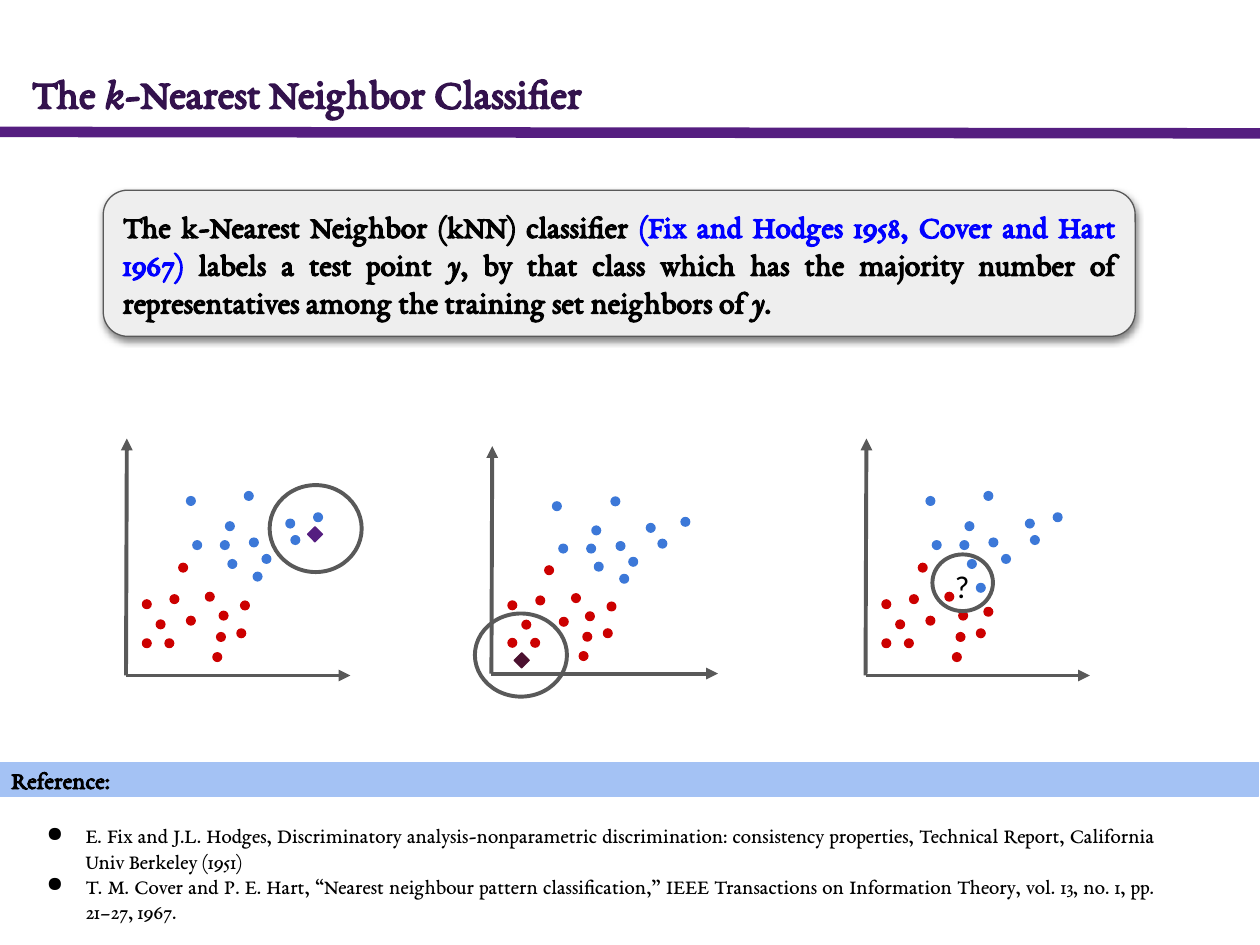
"""Builds the slide on the k-nearest neighbor classifier."""
from lxml.etree import SubElement
from pptx import Presentation
from pptx.dml.color import RGBColor
from pptx.enum.shapes import MSO_CONNECTOR as LINE, MSO_SHAPE as SHAPE
from pptx.enum.text import MSO_ANCHOR as ANCHOR, PP_ALIGN as ALIGN
from pptx.oxml.ns import qn
from pptx.util import Pt

SERIF = "EB Garamond"
BLACK, GRAY, PURPLE = "000000", "595959", "551E80"
RED, BLUE, LINK = "CC0000", "3C78D8", "0000FF"

TITLE = [("The ", ""), ("k", "i"), ("-Nearest Neighbor Classifier", "")]
CLAIM = [
    ("The k-Nearest Neighbor (kNN) classifier ", "", BLACK),
    ("(Fix and Hodges 1958, Cover and Hart 1967)", "", LINK),
    (" labels a test point ", "", BLACK),
    ("y", "i", BLACK),
    (", by that class which has the majority number of representatives "
     "among the training set neighbors of ", "", BLACK),
    ("y", "i", BLACK),
    (". ", "", BLACK),
]
SOURCES = [
    "E. Fix and J.L. Hodges, Discriminatory analysis-nonparametric discrimination: "
    "consistency properties, Technical Report, California Univ Berkeley (1951)",
    "T. M. Cover and P. E. Hart, “Nearest neighbour pattern classification,” IEEE "
    "Transactions on Information Theory, vol. 13, no. 1, pp. 21–27, 1967.",
]

DOTS = {
    RED: [(17.3, 31.7), (9.4, 20.9), (22.3, 20.9), (9.4, 43.2), (25.2, 46.1),
          (34.6, 33.8), (49.7, 13), (45.4, 47.5), (51.8, 24.5), (53.3, 36.7),
          (30.2, 64.1), (63.4, 26.6), (65.5, 42.5)],
    BLUE: [(58.3, 66.2), (38.2, 77), (54, 77), (72.7, 59), (70.6, 78.5),
           (77.8, 69.1), (56.9, 87.8), (91.4, 89.3), (94.3, 79.9),
           (67.7, 105.1), (107.3, 92.9), (34.6, 102.2)],
}
DOT, MARK = 5, 8.6
AXES = [(0.5, 135.4), (128.2, 0)]
PLOTS = [
    dict(base=(72, 386), scale=(1, 1), moved={},
         ring=(154.1, 277.2, 52.6, 49.7), mark=(175.7, 301), hue=PURPLE),
    dict(base=(280.8, 384.9), scale=(1.01, 0.96),
         moved={(RED, 5): (38.5, 33.4), (BLUE, 7): (87.7, 89.3)},
         ring=(271.4, 350.6, 52.6, 47.5), mark=(293.8, 373), hue="4C1130"),
    dict(base=(494.6, 386), scale=(1, 1),
         moved={(RED, 12): (67.7, 38.9), (BLUE, 3): (63.4, 52.6)},
         ring=(532.8, 316.8, 34.6, 32.4), mark=None, hue=None),
]


def color(text):
    return RGBColor.from_string(text)


def add_shape(shapes, kind, box, fill, edge, width=0.75):
    shape = shapes.add_shape(kind, *map(Pt, box))
    shape.shadow.inherit = False
    if fill:
        shape.fill.solid()
        shape.fill.fore_color.rgb = color(fill)
    else:
        shape.fill.background()
    shape.line.color.rgb = color(edge)
    shape.line.width = Pt(width)
    return shape


def add_line(shapes, start, end, hue, width, arrow=False):
    line = shapes.add_connector(LINE.STRAIGHT, *map(Pt, start + end))
    line.line.color.rgb = color(hue)
    line.line.width = Pt(width)
    if arrow:
        SubElement(line.line._get_or_add_ln(), qn("a:tailEnd"), type="triangle")
    SubElement(line._element.spPr, qn("a:effectLst"))


def set_frame(shape, anchor):
    frame = shape.text_frame
    frame.word_wrap = True
    frame.vertical_anchor = anchor
    frame.margin_left = frame.margin_right = Pt(7.2)
    frame.margin_top = frame.margin_bottom = Pt(7.2)
    return frame


def add_run(para, text, size, hue=BLACK, style="", face=SERIF):
    run = para.add_run()
    run.text = text
    font = run.font
    font.name, font.size = face, Pt(size)
    font.bold, font.italic = "b" in style, "i" in style
    font.color.rgb = color(hue)


def add_text(shapes, box, anchor=ANCHOR.TOP):
    return set_frame(shapes.add_textbox(*map(Pt, box)), anchor)


def add_bullet(para):
    props = para._p.get_or_add_pPr()
    props.set("marL", str(Pt(36)))
    props.set("indent", str(-Pt(22.3)))
    SubElement(SubElement(props, qn("a:buClr")), qn("a:srgbClr"), val=BLACK)
    SubElement(props, qn("a:buChar"), char="●")


def add_shadow(shape):
    effect = shape._element.spPr.find(qn("a:effectLst"))
    cast = SubElement(effect, qn("a:outerShdw"), blurRad=str(Pt(4.5)),
                      dist=str(Pt(1.5)), dir="5400000", algn="bl", rotWithShape="0")
    tint = SubElement(cast, qn("a:srgbClr"), val=BLACK)
    SubElement(tint, qn("a:alpha"), val="50000")


def add_plot(slide, plot):
    shapes = slide.shapes.add_group_shape().shapes

    def place(point):
        (left, base), (wide, high) = plot["base"], plot["scale"]
        return left + point[0] * wide, base - point[1] * high

    for tip in AXES:
        add_line(shapes, place((0, 0)), place(tip), GRAY, 2.25, True)
    for hue, points in DOTS.items():
        for num, point in enumerate(points):
            spot = place(plot["moved"].get((hue, num), point))
            add_shape(shapes, SHAPE.OVAL, spot + (DOT, DOT), hue, hue)
    add_shape(shapes, SHAPE.OVAL, plot["ring"], None, GRAY, 2.25)
    if plot["mark"]:
        box = plot["mark"] + (MARK, MARK)
        add_shape(shapes, SHAPE.DIAMOND, box, plot["hue"], plot["hue"])
    else:
        frame = add_text(shapes, (538.6, 316.8, 25.2, 28.1))
        add_run(frame.paragraphs[0], "?", 18, face="Calibri")


def main():
    deck = Presentation()
    deck.slide_width, deck.slide_height = Pt(720), Pt(540)
    slide = deck.slides.add_slide(deck.slide_layouts[5])
    shapes = slide.shapes

    title = shapes.title
    title.left, title.top, title.width, title.height = map(Pt, (10.8, 37.4, 512.6, 30.2))
    para = set_frame(title, ANCHOR.MIDDLE).paragraphs[0]
    para.alignment = ALIGN.LEFT
    for text, style in TITLE:
        add_run(para, text, 24, "33124D", style + "b")
    add_line(shapes, (0, 75.4), (720, 76.2), PURPLE, 6)

    claim = add_shape(shapes, SHAPE.ROUNDED_RECTANGLE, (59, 108.7, 589.7, 83.5),
                      "EEEEEE", GRAY)
    add_shadow(claim)
    para = set_frame(claim, ANCHOR.MIDDLE).paragraphs[0]
    para.alignment = ALIGN.JUSTIFY
    for text, style, hue in CLAIM:
        add_run(para, text, 18, hue, style + "b")

    for plot in PLOTS:
        add_plot(slide, plot)

    band = add_shape(shapes, SHAPE.RECTANGLE, (-0.7, 435.6, 720, 19.4), "A4C2F4", "A4C2F4")
    para = set_frame(band, ANCHOR.MIDDLE).paragraphs[0]
    para.alignment = ALIGN.LEFT
    add_run(para, "Reference:", 14, style="b")

    frame = add_text(shapes, (5.8, 463, 661.7, 37.4))
    for num, text in enumerate(SOURCES):
        para = frame.add_paragraph() if num else frame.paragraphs[0]
        add_bullet(para)
        para.alignment = ALIGN.JUSTIFY
        add_run(para, text, 12)

    deck.save("out.pptx")


if __name__ == "__main__":
    main()
